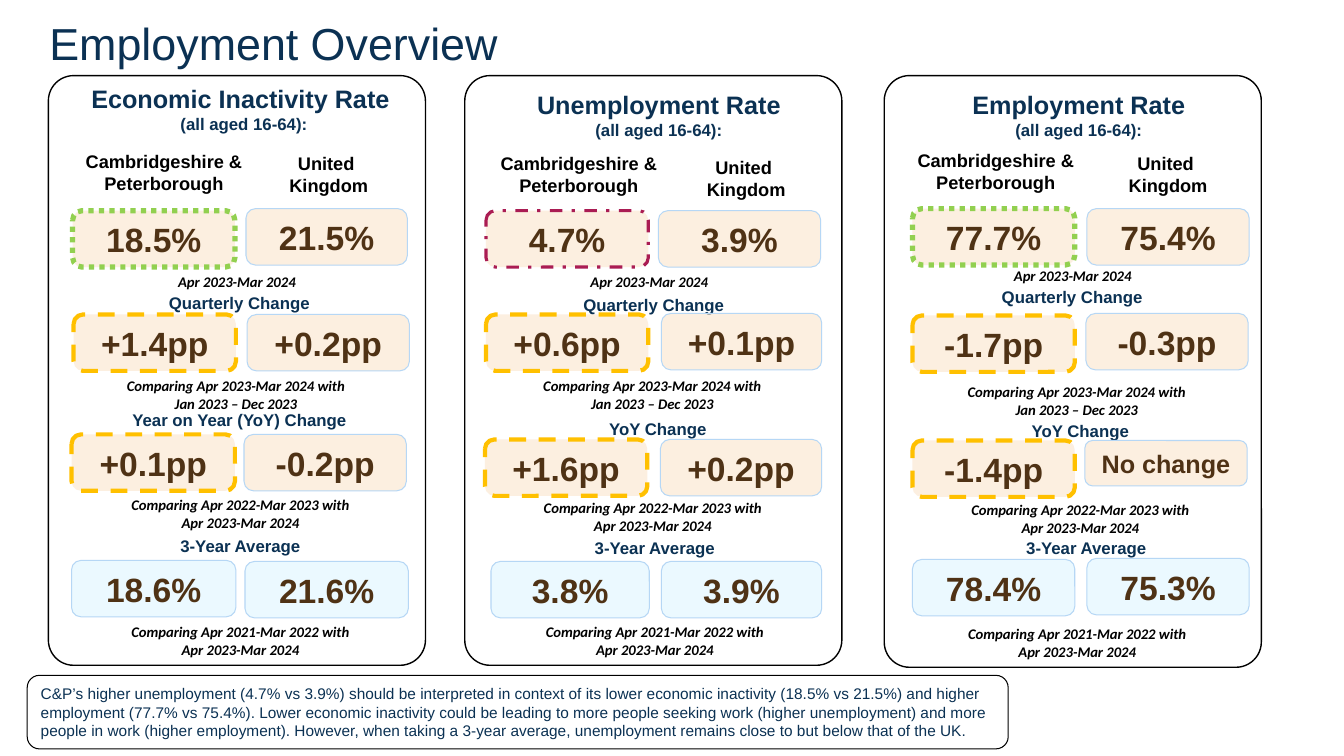
from lxml import etree
from pptx import Presentation
from pptx.dml.color import RGBColor
from pptx.enum.dml import MSO_LINE
from pptx.enum.shapes import MSO_SHAPE
from pptx.enum.text import MSO_ANCHOR, PP_ALIGN
from pptx.oxml.ns import qn
from pptx.util import Pt

ROUNDED = MSO_SHAPE.ROUNDED_RECTANGLE
CENTER, LEFT = PP_ALIGN.CENTER, PP_ALIGN.LEFT
TOP, MIDDLE, BOTTOM = MSO_ANCHOR.TOP, MSO_ANCHOR.MIDDLE, MSO_ANCHOR.BOTTOM

# ---- Content (lengths in px, 100 px to the inch) ----
PX = 9144
SLIDE_W, SLIDE_H = 1333, 750
COLORS = {"navy": "0B3153", "brown": "4F3215", "black": "000000", "white": "FFFFFF",
          "peach": "F9D1A6", "sky": "C6EEFF", "pale": "B6D7F5",
          "green": "92D050", "amber": "FFC000", "crimson": "AA1C53"}
TINT = 34  # opacity of value boxes, percent

# Outline styles: colour, width in points, dash
PLAIN = ("pale", 0.75, None)
BETTER = ("green", 3.75, MSO_LINE.ROUND_DOT)
WORSE = ("crimson", 2.25, MSO_LINE.DASH_DOT)
CHANGE = ("amber", 3, MSO_LINE.DASH)

TITLE = "Employment Overview"
SUBHEADING = "(all aged 16-64):"
LOCAL = ["Cambridgeshire & Peterborough"]
NATIONAL = ["United ", "Kingdom"]
SUMMARY = ("C&P’s higher unemployment (4.7% vs 3.9%) should be interpreted in context of its "
           "lower economic inactivity (18.5% vs 21.5%) and higher employment (77.7% vs 75.4%). "
           "Lower economic inactivity could be leading to more people seeking work (higher "
           "unemployment) and more people in work (higher employment). However, when taking a "
           "3-year average, unemployment remains close to but below that of the UK.")

# The four measures of every card: value box colour, note, note width and height
MEASURES = [
    ("peach", "Apr 2023-Mar 2024", 192, 29),
    ("peach", "Comparing Apr 2023-Mar 2024 with Jan 2023 – Dec 2023", 244, 47),
    ("peach", "Comparing Apr 2022-Mar 2023 with Apr 2023-Mar 2024", 245, 47),
    ("sky", "Comparing Apr 2021-Mar 2022 with Apr 2023-Mar 2024", 245, 47),
]
LABEL_W, LABEL_H, VALUE_H = 333, 30, 56

# Measure: label (text, x, y), local and national (value, x, y, width), note (x, y)
CARDS = [
    {"heading": "Economic Inactivity Rate ", "heading_box": (77, 78, 330, 61),
     "card_box": (48, 75, 374, 585), "fill": None, "level": BETTER,
     "local_box": (38, 144, 249, 54), "national_box": (247, 146, 158, 54),
     "measures": [
         (None, ("18.5%", 72, 209, 161), ("21.5%", 244, 207, 160), (139, 266)),
         (("Quarterly Change", 71, 286),
          ("+1.4pp", 73, 312, 161), ("+0.2pp", 245, 312, 161), (112, 369)),
         (("Year on Year (YoY) Change", 71, 402),
          ("+0.1pp", 71, 431, 162), ("-0.2pp", 242, 431, 161), (116, 487)),
         (("3-Year Average", 72, 527),
          ("18.6%", 71, 556, 163), ("21.6%", 243, 557, 162), (116, 613)),
     ]},
    {"heading": "Unemployment Rate", "heading_box": (491, 84, 325, 61),
     "card_box": (461, 75, 374, 585), "fill": None, "level": WORSE,
     "local_box": (473, 146, 202, 54), "national_box": (660, 150, 160, 54),
     "measures": [
         (None, ("4.7%", 482, 209, 161), ("3.9%", 653, 209, 161), (548, 266)),
         (("Quarterly Change", 482, 287),
          ("+0.6pp", 482, 312, 161), ("+0.1pp", 656, 311, 159), (525, 369)),
         (("YoY Change", 486, 411),
          ("+1.6pp", 481, 436, 161), ("+0.2pp", 655, 436, 160), (525, 490)),
         (("3-Year Average", 483, 529),
          ("3.8%", 487, 557, 157), ("3.9%", 656, 557, 159), (527, 613)),
     ]},
    {"heading": "Employment Rate", "heading_box": (905, 84, 330, 61),
     "card_box": (877, 75, 374, 587), "fill": "white", "level": BETTER,
     "local_box": (889, 143, 197, 54), "national_box": (1078, 146, 161, 54),
     "measures": [
         (None, ("77.7%", 905, 207, 161), ("75.4%", 1078, 207, 161), (968, 260)),
         (("Quarterly Change", 897, 280),
          ("-1.7pp", 905, 313, 161), ("-0.3pp", 1077, 311, 161), (946, 375)),
         (("YoY Change", 905, 412),
          ("-1.4pp", 905, 437, 161), ("No change", 1076, 437, 161), (949, 492)),
         (("3-Year Average", 911, 529),
          ("78.4%", 905, 555, 161), ("75.3%", 1078, 554, 161), (946, 615)),
     ]},
]

prs = Presentation()
prs.slide_width, prs.slide_height = SLIDE_W * PX, SLIDE_H * PX
slide = prs.slides.add_slide(prs.slide_layouts[6])


# ---- Helpers ----
def rgb(name):
    return RGBColor.from_string(COLORS[name])


def emu(box):
    return [length * PX for length in box]


def write(text, box=None, shape=None, size=12, sizes=None, color="navy", font="Arial",
          bold=True, italic=False, align=CENTER, anchor=TOP, margin=None, spacing=None):
    """Write one paragraph per line of text into a shape or a new text box."""
    lines = [text] if isinstance(text, str) else text
    frame = (shape or slide.shapes.add_textbox(*emu(box))).text_frame
    frame.word_wrap = True
    frame.vertical_anchor = anchor
    if margin is not None:
        frame.margin_left = frame.margin_right = margin
        frame.margin_top = frame.margin_bottom = margin
    for i, line in enumerate(lines):
        paragraph = frame.paragraphs[0] if i == 0 else frame.add_paragraph()
        paragraph.alignment = align
        if spacing:
            paragraph.line_spacing = spacing
        run = paragraph.add_run()
        run.text = line
        run.font.name, run.font.size = font, Pt(sizes[i] if sizes else size)
        run.font.bold, run.font.italic = bold, italic
        run.font.color.rgb = rgb(color)


def rounded_box(box, outline, fill=None, opacity=100, corner=None):
    shape = slide.shapes.add_shape(ROUNDED, *emu(box))
    shape.shadow.inherit = False
    if corner:
        shape.adjustments[0] = corner
    if fill:
        shape.fill.solid()
        shape.fill.fore_color.rgb = rgb(fill)
        if opacity < 100:
            tone = shape.fill._xPr.find(".//" + qn("a:srgbClr"))
            etree.SubElement(tone, qn("a:alpha"), val=str(opacity * 1000))
    else:
        shape.fill.background()
    color, width, dash = outline
    shape.line.color.rgb = rgb(color)
    shape.line.width = Pt(width)
    if dash:
        shape.line.dash_style = dash
    return shape


def value_box(value, x, y, width, outline, fill):
    wordy = value == "No change"
    box = rounded_box((x, y, width, 45 if wordy else VALUE_H), outline, fill, TINT)
    write(value, shape=box, size=18 if wordy else 24, color="brown", anchor=MIDDLE)


# ---- Title and summary ----
write(TITLE, (49, 1, 873, 69), size=32, bold=False, align=LEFT, anchor=BOTTOM,
      margin=0, spacing=0.9)
summary_box = rounded_box((27, 670, 973, 73), ("black", 0.75, None))
write(SUMMARY, shape=summary_box, size=11, bold=False, align=LEFT, anchor=MIDDLE)

# ---- Cards ----
for card in CARDS:
    rounded_box(card["card_box"], ("black", 1, None), card["fill"], corner=0.067)
    write([card["heading"], SUBHEADING], card["heading_box"], sizes=(18, 12))
    write(LOCAL, card["local_box"], size=13, color="black")
    write(NATIONAL, card["national_box"], size=13, color="black")

    for measure, details in zip(card["measures"], MEASURES):
        label, local, national, note_at = measure
        fill, note, note_w, note_h = details
        if label:
            write(label[0], (*label[1:], LABEL_W, LABEL_H))
            local_outline = PLAIN if fill == "sky" else CHANGE
        else:
            local_outline = card["level"]
        value_box(*local, local_outline, fill)
        value_box(*national, PLAIN, fill)
        write(note, (*note_at, note_w, note_h), size=10.5, color="black",
              font="Calibri", italic=True)

prs.save("out.pptx")
